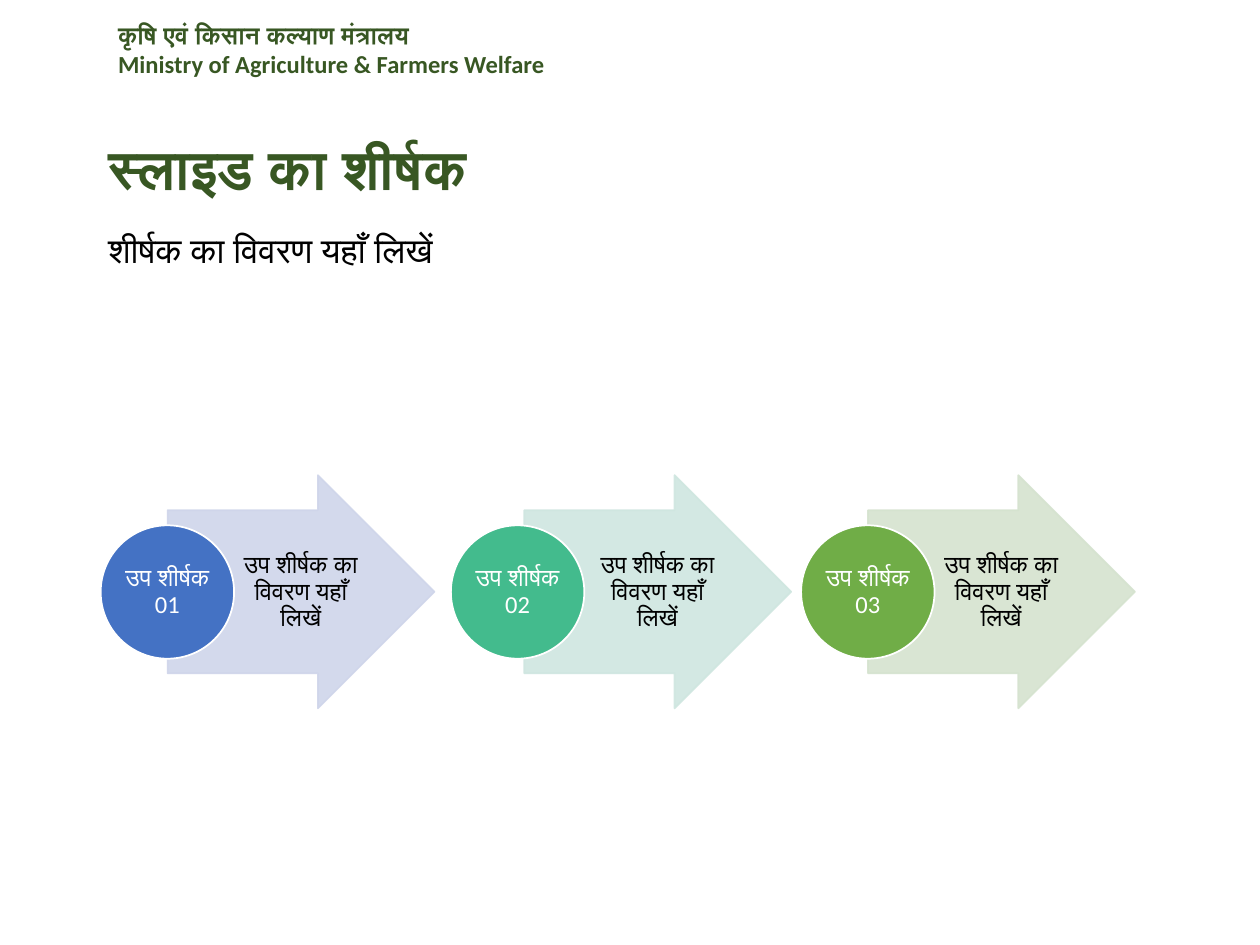
from dataclasses import dataclass

import lxml.etree
import pptx
import pptx.dml.color
import pptx.enum.shapes
import pptx.enum.text
import pptx.oxml.ns
import pptx.util

Cm = pptx.util.Cm
ALIGN = pptx.enum.text.PP_ALIGN
ANCHOR = pptx.enum.text.MSO_ANCHOR
SHAPE = pptx.enum.shapes.MSO_SHAPE


@dataclass(frozen=True)
class Theme:
    font: str = "Calibri"
    heading: str = "385723"
    body: str = "000000"
    light: str = "FFFFFF"
    title_size: float = 31.4
    subtitle_size: float = 20
    text_size: float = 14
    arrow_opacity: int = 90


@dataclass(frozen=True)
class Box:
    left: float
    top: float
    width: float
    height: float

    def lengths(self) -> tuple:
        return Cm(self.left), Cm(self.top), Cm(self.width), Cm(self.height)


@dataclass(frozen=True)
class Style:
    size: float
    color: str
    bold: bool = False
    align: ALIGN = ALIGN.LEFT
    spacing: float = 1.0


@dataclass(frozen=True)
class Step:
    heading: str
    arrow_left: float
    arrow_color: str
    circle_color: str


THEME = Theme()
HEADER = Style(THEME.text_size, THEME.heading, bold=True)
TITLE = Style(THEME.title_size, THEME.heading, bold=True, spacing=0.7)
SUBTITLE = Style(THEME.subtitle_size, THEME.body, spacing=0.9)
DETAIL = Style(THEME.text_size, THEME.body, align=ALIGN.CENTER, spacing=0.9)
CIRCLE = Style(THEME.text_size, THEME.light, align=ALIGN.CENTER, spacing=0.9)

STEP_DETAIL = "उप शीर्षक का विवरण यहाँ लिखें"
STEPS = [
    Step("उप शीर्षक 01", 3.38, "CFD5EA", "4472C4"),
    Step("उप शीर्षक 02", 10.57, "CFE6E0", "43BB8D"),
    Step("उप शीर्षक 03", 17.5, "D5E3CF", "70AD47"),
]
CIRCLE_LEFT = 2.03
CIRCLE_PITCH = 7.06
DETAIL_OFFSET = 1.35


def rgb(color: str) -> pptx.dml.color.RGBColor:
    return pptx.dml.color.RGBColor.from_string(color)


def write(frame, text: str, style: Style, anchor=ANCHOR.TOP, insets=None) -> None:
    frame.text = text
    frame.word_wrap = True
    frame.auto_size = pptx.enum.text.MSO_AUTO_SIZE.NONE
    frame.vertical_anchor = anchor
    if insets:
        (frame.margin_left, frame.margin_top,
         frame.margin_right, frame.margin_bottom) = map(Cm, insets)
    for paragraph in frame.paragraphs:
        paragraph.alignment = style.align
        paragraph.line_spacing = style.spacing
        paragraph.font.name = THEME.font
        paragraph.font.size = pptx.util.Pt(style.size)
        paragraph.font.bold = style.bold
        paragraph.font.color.rgb = rgb(style.color)


def add_text(slide, box: Box, text: str, style: Style, **layout) -> None:
    write(slide.shapes.add_textbox(*box.lengths()).text_frame, text, style, **layout)


def add_filled(slide, kind: SHAPE, box: Box, fill: str, line: str):
    shape = slide.shapes.add_shape(kind, *box.lengths())
    shape.shadow.inherit = False
    shape.fill.solid()
    shape.fill.fore_color.rgb = rgb(fill)
    shape.line.color.rgb = rgb(line)
    shape.line.width = pptx.util.Pt(1)
    return shape


def set_opacity(shape, percent: int) -> None:
    qn = pptx.oxml.ns.qn
    for color in shape.element.spPr.iter(qn("a:srgbClr")):
        lxml.etree.SubElement(color, qn("a:alpha")).set("val", str(percent * 1000))


def add_step(slide, step: Step, circle_left: float) -> None:
    arrow = add_filled(slide, SHAPE.RIGHT_ARROW, Box(step.arrow_left, 9.58, 5.38, 4.7),
                       step.arrow_color, step.arrow_color)
    arrow.adjustments[0] = 0.7
    arrow.adjustments[1] = 0.5
    set_opacity(arrow, THEME.arrow_opacity)
    add_text(slide, Box(step.arrow_left + DETAIL_OFFSET, 10.29, 2.62, 3.3), STEP_DETAIL,
             DETAIL, anchor=ANCHOR.MIDDLE, insets=(0.1, 0.03, 0.05, 0.03))
    circle = add_filled(slide, SHAPE.OVAL, Box(circle_left, 10.59, 2.69, 2.69),
                        step.circle_color, THEME.light)
    write(circle.text_frame, step.heading, CIRCLE, anchor=ANCHOR.MIDDLE,
          insets=(0.03, 0.03, 0.03, 0.03))


def main() -> None:
    deck = pptx.Presentation()
    deck.slide_width, deck.slide_height = Cm(25.4), Cm(19.05)
    slide = deck.slides.add_slide(deck.slide_layouts[5])

    title = slide.shapes.title
    title.left, title.top, title.width, title.height = Box(1.93, 2.95, 11.68, 1.19).lengths()
    write(title.text_frame, "स्लाइड का शीर्षक", TITLE)

    add_text(slide, Box(2.13, 0.28, 11.1, 1.45),
             "कृषि एवं किसान कल्याण मंत्रालय\nMinistry of Agriculture & Farmers Welfare", HEADER)
    add_text(slide, Box(1.93, 4.57, 13.69, 0.94), "शीर्षक का विवरण यहाँ लिखें", SUBTITLE)

    for index, step in enumerate(STEPS):
        add_step(slide, step, CIRCLE_LEFT + index * CIRCLE_PITCH)

    deck.save("out.pptx")


if __name__ == "__main__":
    main()
